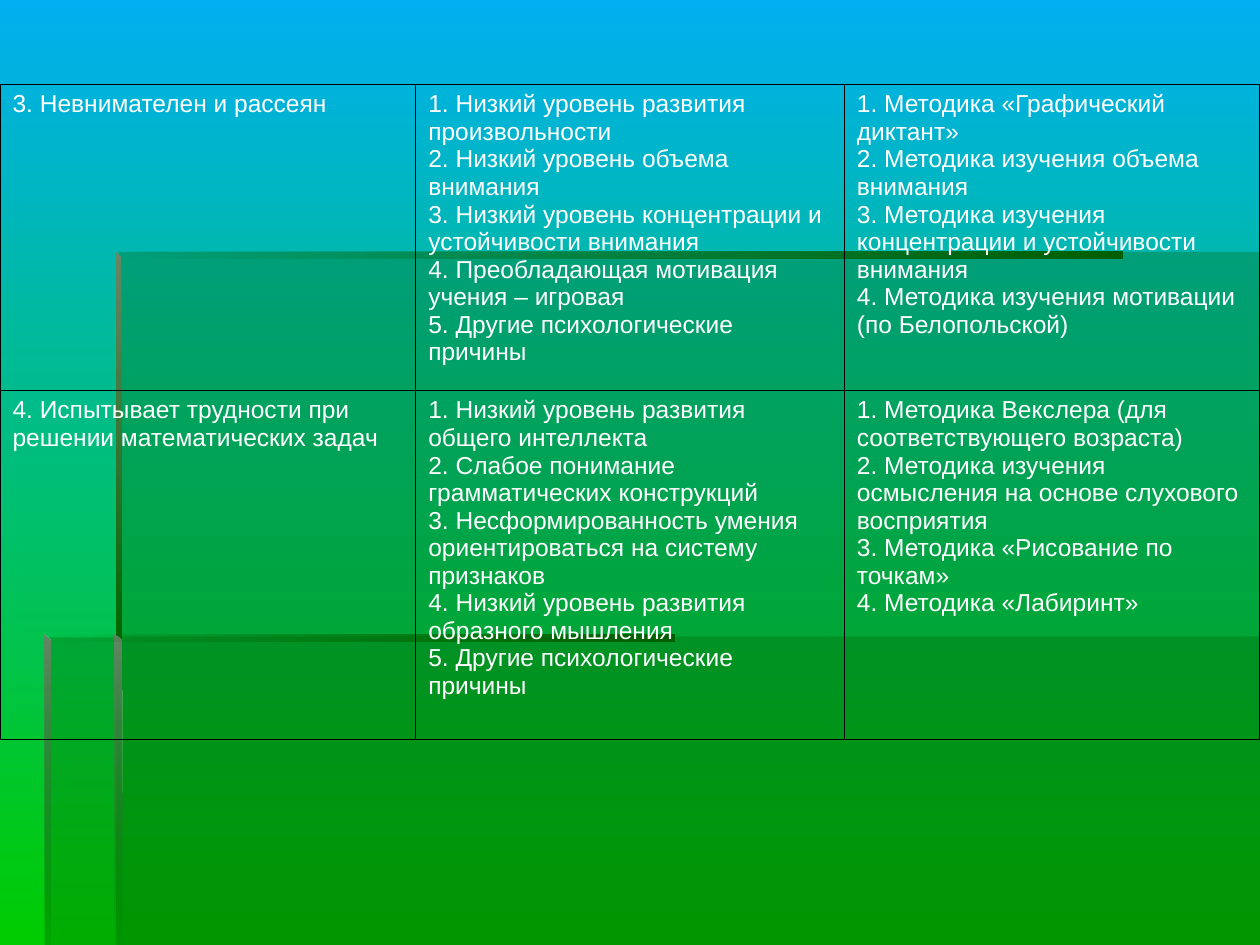
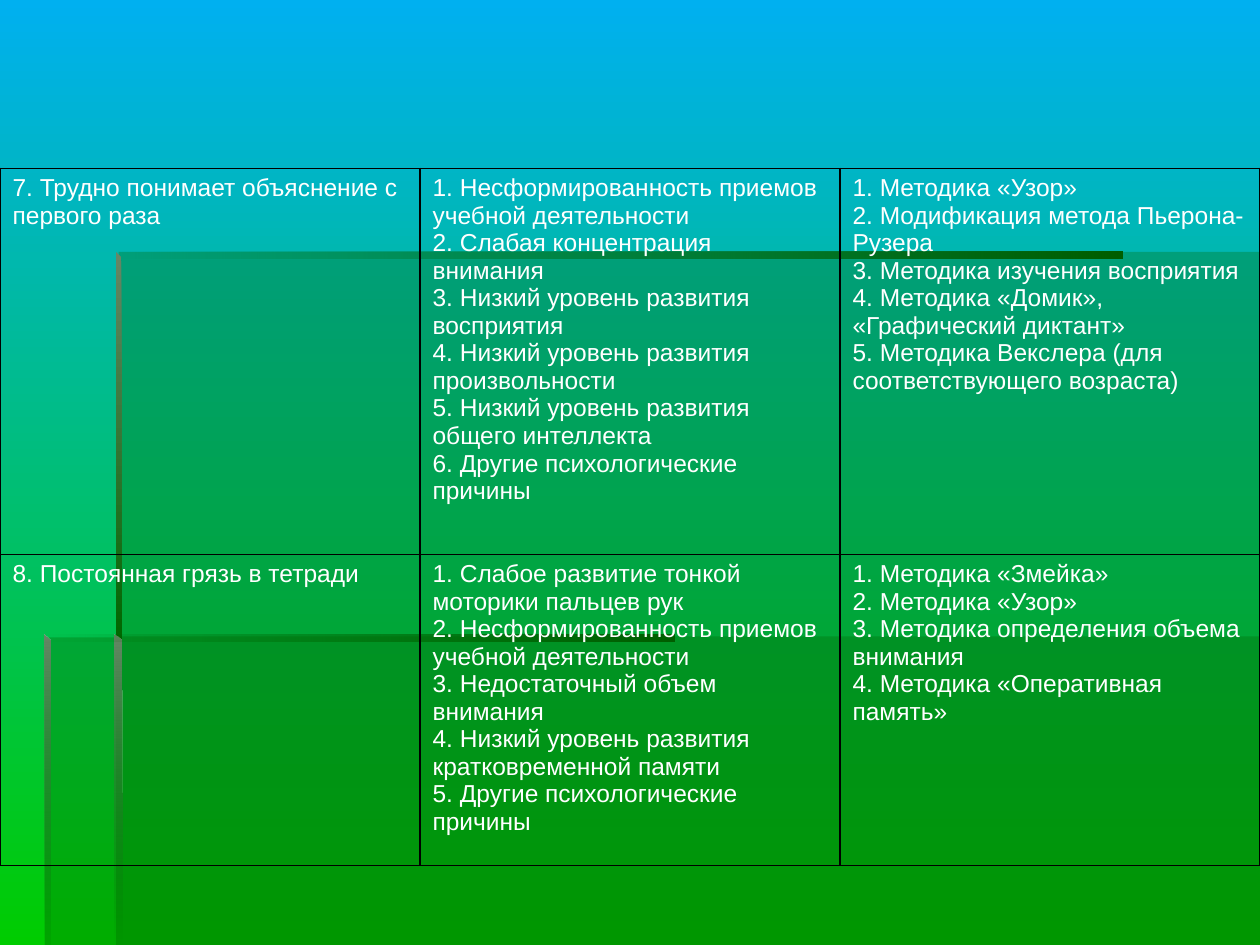
from dataclasses import dataclass

from lxml import etree
from pptx import Presentation
from pptx.dml.color import RGBColor
from pptx.oxml.ns import qn
from pptx.util import Cm, Pt


@dataclass(frozen=True)
class Theme:
    sky: str = "00B0F0"
    grass: str = "00CC00"
    dark: str = "006600"
    shade: str = "005E00"
    pale: str = "668666"
    text: str = "FFFFFF"
    rule: str = "000000"
    font: str = "Arial"
    size: float = 14
    rule_width: float = 0.75


THEME = Theme()
WIDTH, HEIGHT = 25.4, 19.05
ACROSS, DOWN = 0, 270  # gradient angles, counter-clockwise
BLANK = 6

# Translucent panels: outline points in cm
PANELS = [
    [(2.34, 12.83), (2.34, HEIGHT), (WIDTH, HEIGHT), (WIDTH, 12.83)],
    [(2.39, 12.85), (0.91, 12.85), (0.91, HEIGHT), (WIDTH, HEIGHT),
     (WIDTH, 5.08), (2.39, 5.08)],
]
PANEL_ALPHA = 30

# Bevelled edges: outline, (colour, opacity) at both ends, angle
FADE_IN = [(THEME.dark, 0), (THEME.shade, 100)]
EDGES = [
    ([(2.34, 5.08), (2.34, 5.21), (22.63, 5.21), (22.63, 5.08)],
     FADE_IN, ACROSS),
    ([(2.34, 5.08), (2.34, 12.95), (2.46, 12.95), (2.44, 5.18)],
     [(THEME.pale, 100), (THEME.dark, 100)], DOWN),
    ([(2.31, HEIGHT), (2.46, HEIGHT), (2.44, 12.9), (2.31, 12.8)],
     [(THEME.pale, 100), (THEME.dark, 0)], DOWN),
    ([(0.89, 12.8), (0.89, 12.93), (13.59, 12.93), (13.59, 12.8)],
     FADE_IN, ACROSS),
    ([(0.89, 12.8), (0.89, HEIGHT), (1.02, HEIGHT), (1.02, 12.93)],
     [(THEME.pale, 100), (THEME.dark, 10)], DOWN),
]

# Each row: problem, causes, methods
OTHER = "Другие психологические причины"
FOCUS = [
    ("3. Невнимателен и рассеян",
     ["Низкий уровень развития произвольности",
      "Низкий уровень объема внимания",
      "Низкий уровень концентрации и устойчивости внимания",
      "Преобладающая мотивация учения – игровая",
      OTHER],
     ["Методика «Графический диктант»",
      "Методика изучения объема внимания",
      "Методика изучения концентрации и устойчивости внимания",
      "Методика изучения мотивации (по Белопольской)"]),
    ("4. Испытывает трудности при решении математических задач",
     ["Низкий уровень развития общего интеллекта",
      "Слабое понимание грамматических конструкций",
      "Несформированность умения ориентироваться на систему признаков",
      "Низкий уровень развития образного мышления",
      OTHER],
     ["Методика Векслера (для соответствующего возраста)",
      "Методика изучения осмысления на основе слухового восприятия",
      "Методика «Рисование по точкам»",
      "Методика «Лабиринт»"]),
]
GRASP = [
    ("7. Трудно понимает объяснение с первого раза",
     ["Несформированность приемов учебной деятельности",
      "Слабая концентрация внимания",
      "Низкий уровень развития восприятия",
      "Низкий уровень развития произвольности",
      "Низкий уровень развития общего интеллекта",
      OTHER],
     ["Методика «Узор»",
      "Модификация метода Пьерона-Рузера",
      "Методика изучения восприятия",
      "Методика «Домик», «Графический диктант»",
      "Методика Векслера (для соответствующего возраста)"]),
    ("8. Постоянная грязь в тетради",
     ["Слабое развитие тонкой моторики пальцев рук",
      "Несформированность приемов учебной деятельности",
      "Недостаточный объем внимания",
      "Низкий уровень развития кратковременной памяти",
      OTHER],
     ["Методика «Змейка»",
      "Методика «Узор»",
      "Методика определения объема внимания",
      "Методика «Оперативная память»"]),
]


def number(items):
    return "\n".join(f"{n}. {item}" for n, item in enumerate(items, 1))


class Deck:
    def __init__(self, theme):
        self.theme = theme
        self.prs = Presentation()
        self.prs.slide_width, self.prs.slide_height = Cm(WIDTH), Cm(HEIGHT)
        self.slide = None

    def add_slide(self):
        """Start a slide with the shared backdrop."""
        self.slide = self.prs.slides.add_slide(self.prs.slide_layouts[BLANK])
        self.blend(self.slide.background.fill,
                   [self.theme.sky, self.theme.grass], DOWN)
        for points in PANELS:
            shape = self.outline(points)
            shape.fill.solid()
            shape.fill.fore_color.rgb = RGBColor.from_string(self.theme.dark)
            self.fade(shape, [PANEL_ALPHA])
        for points, ends, angle in EDGES:
            shape = self.outline(points)
            self.blend(shape.fill, [color for color, _ in ends], angle)
            self.fade(shape, [alpha for _, alpha in ends])

    def outline(self, points):
        spots = [(Cm(x), Cm(y)) for x, y in points]
        builder = self.slide.shapes.build_freeform(*spots[0])
        builder.add_line_segments(spots[1:], close=True)
        shape = builder.convert_to_shape()
        shape.shadow.inherit = False
        shape.line.fill.background()
        return shape

    def blend(self, fill, colors, angle):
        fill.gradient()
        fill.gradient_angle = angle
        for stop, color in zip(fill.gradient_stops, colors):
            stop.color.rgb = RGBColor.from_string(color)

    def fade(self, shape, alphas):
        """Set the opacity in percent of each fill colour in turn."""
        colors = shape.element.spPr.iter(qn("a:srgbClr"))
        for color, alpha in zip(list(colors), alphas):
            etree.SubElement(color, qn("a:alpha"), val=str(alpha * 1000))

    def table(self, top, widths, heights, rows):
        frame = self.slide.shapes.add_table(
            len(heights), len(widths), 0, Cm(top),
            Cm(sum(widths)), Cm(sum(heights)))
        grid = frame.table
        grid.first_row = grid.horz_banding = False
        for col, width in zip(grid.columns, widths):
            col.width = Cm(width)
        for row, height, (problem, causes, methods) in zip(
                grid.rows, heights, rows):
            row.height = Cm(height)
            texts = problem, number(causes), number(methods)
            for cell, text in zip(row.cells, texts):
                self.fill_cell(cell, text)

    def fill_cell(self, cell, text):
        cell.fill.background()
        self.border(cell)
        cell.text_frame.text = text
        for para in cell.text_frame.paragraphs:
            for run in para.runs:
                run.font.name = self.theme.font
                run.font.size = Pt(self.theme.size)
                run.font.color.rgb = RGBColor.from_string(self.theme.text)

    def border(self, cell):
        props = cell._tc.get_or_add_tcPr()
        for place, side in enumerate("LRTB"):
            line = etree.Element(qn(f"a:ln{side}"),
                                 w=str(Pt(self.theme.rule_width)))
            fill = etree.SubElement(line, qn("a:solidFill"))
            etree.SubElement(fill, qn("a:srgbClr"), val=self.theme.rule)
            props.insert(place, line)


def main():
    deck = Deck(THEME)
    deck.add_slide()
    deck.table(1.7, [8.38, 8.64, 8.38], [6.17, 7.04], FOCUS)
    deck.add_slide()
    deck.table(3.39, [WIDTH / 3] * 3, [7.78, 6.28], GRASP)
    deck.prs.save("out.pptx")


if __name__ == "__main__":
    main()
